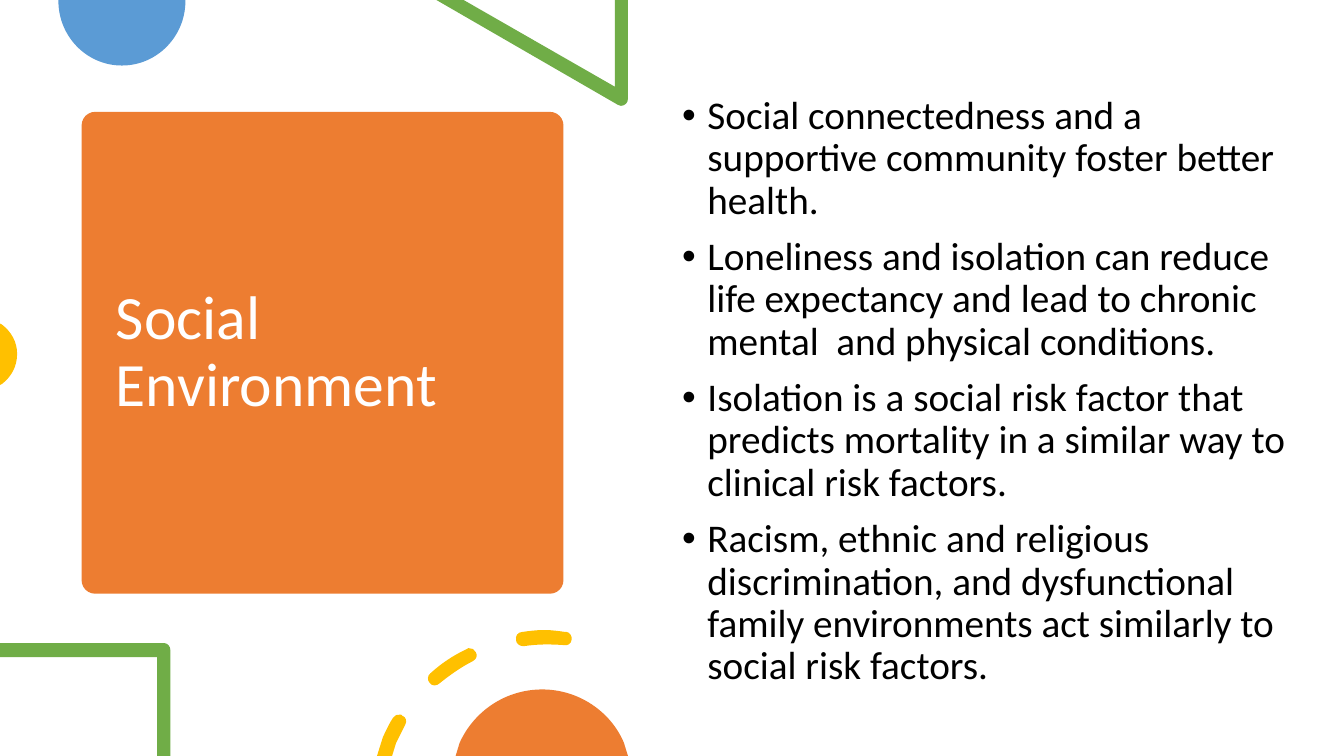
from lxml import etree
from pptx import Presentation
from pptx.dml.color import RGBColor
from pptx.enum.shapes import MSO_SHAPE
from pptx.enum.text import MSO_ANCHOR, MSO_AUTO_SIZE, PP_ALIGN
from pptx.oxml.ns import qn
from pptx.util import Inches, Pt

ROUNDED = MSO_SHAPE.ROUNDED_RECTANGLE
MIDDLE, TOP = MSO_ANCHOR.MIDDLE, MSO_ANCHOR.TOP
LEFT = PP_ALIGN.LEFT
NO_AUTOFIT = MSO_AUTO_SIZE.NONE
TITLE_ONLY = 5
FONT = "Calibri"
COLORS = {"orange": "ED7D31", "blue": "5B9BD5", "green": "70AD47",
          "gold": "FFC000", "white": "FFFFFF", "black": "000000"}

TITLE = "Social Environment"
POINTS = [
    "Social connectedness and a supportive community foster better health.",
    "Loneliness and isolation can reduce life expectancy and lead to chronic "
    "mental  and physical conditions.",
    "Isolation is a social risk factor that predicts mortality in a similar "
    "way to clinical risk factors.",
    "Racism, ethnic and religious discrimination, and dysfunctional family "
    "environments act similarly to social risk factors.",
]

# Each contour starts at a point; pairs are lines and sixes are cubic curves.
# Coordinates are inches from the top left of the decoration's box.
BLUE_DISC = [[(1.26, 0), (0, 0), (0, 0.01), (0, 0.36, 0.28, 0.65, 0.63, 0.65),
              (0.98, 0.65, 1.26, 0.36, 1.26, 0.01)]]
GREEN_TRIANGLE = [[(1.9, 0), (1.77, 0), (1.77, 0.86), (0.27, 0), (0, 0),
                   (1.8, 1.04), (1.81, 1.05, 1.82, 1.05, 1.83, 1.05),
                   (1.87, 1.05, 1.9, 1.02, 1.9, 0.98)]]
GOLD_DISC = [[(0, 0), (0, 0.61), (0.02, 0.6), (0.11, 0.53, 0.17, 0.43, 0.17, 0.3),
              (0.17, 0.18, 0.11, 0.08, 0.02, 0.01)]]
GREEN_FRAME = [[(1.63, 0), (0, 0), (0, 0.14), (1.56, 0.14), (1.56, 1.12),
                (1.69, 1.12), (1.69, 0.07), (1.69, 0.03, 1.66, 0, 1.63, 0)]]
GOLD_DASHES = [
    [(0.23, 0.84), (0.2, 0.83, 0.18, 0.85, 0.16, 0.87),
     (0.12, 0.93, 0.09, 1, 0.06, 1.06), (0, 1.25), (0.15, 1.25), (0.19, 1.12),
     (0.22, 1.06, 0.25, 1, 0.28, 0.94), (0.3, 0.91, 0.29, 0.86, 0.25, 0.85),
     (0.25, 0.84, 0.24, 0.84, 0.23, 0.84)],
    [(0.91, 0.18), (0.91, 0.18, 0.9, 0.18, 0.89, 0.19),
     (0.76, 0.25, 0.64, 0.33, 0.53, 0.43), (0.5, 0.45, 0.5, 0.5, 0.52, 0.52),
     (0.53, 0.54, 0.55, 0.55, 0.57, 0.55), (0.57, 0.55),
     (0.59, 0.55, 0.61, 0.54, 0.62, 0.53),
     (0.72, 0.45, 0.83, 0.37, 0.95, 0.31), (0.99, 0.29, 1, 0.25, 0.98, 0.22),
     (0.97, 0.19, 0.94, 0.18, 0.91, 0.18)],
    [(1.66, 0), (1.58, 0, 1.51, 0.01, 1.44, 0.02),
     (1.4, 0.02, 1.37, 0.06, 1.38, 0.1), (1.38, 0.13, 1.41, 0.16, 1.45, 0.16),
     (1.45, 0.16, 1.45, 0.16, 1.46, 0.16),
     (1.59, 0.14, 1.72, 0.14, 1.86, 0.15), (1.89, 0.16, 1.93, 0.13, 1.93, 0.1),
     (1.94, 0.06, 1.91, 0.02, 1.88, 0.02), (1.88, 0.02, 1.87, 0.02, 1.87, 0.02),
     (1.8, 0.01, 1.73, 0, 1.66, 0)],
]
ORANGE_DISC = [[(0.86, 0), (0.49, 0, 0.18, 0.22, 0.04, 0.53), (0, 0.66),
                (1.71, 0.66), (1.67, 0.53), (1.54, 0.22, 1.22, 0, 0.86, 0)]]
BEHIND_POINTS = [
    (0.58, 0, "blue", BLUE_DISC),
    (4.33, 0, "green", GREEN_TRIANGLE),
    (0, 3.21, "gold", GOLD_DISC),
]
BEFORE_POINTS = [
    (0, 6.38, "green", GREEN_FRAME),
    (3.74, 6.25, "gold", GOLD_DASHES),
    (4.52, 6.84, "orange", ORANGE_DISC),
]


def rgb(name):
    return RGBColor.from_string(COLORS[name])


def paint(shape, color):
    shape.fill.solid()
    shape.fill.fore_color.rgb = rgb(color)
    shape.line.fill.background()
    shape.shadow.inherit = False


def bend(shape, contours):
    """Turn the straight segments that stand for curves into cubic curves."""
    segments = [segment for contour in contours for segment in contour[1:]]
    lines = list(shape.element.iter(qn("a:lnTo")))
    for line, segment in zip(lines, segments):
        if len(segment) == 2:
            continue
        curve = etree.Element(qn("a:cubicBezTo"))
        for x, y in zip(segment[::2], segment[1::2]):
            point = etree.SubElement(curve, qn("a:pt"))
            point.set("x", str(Inches(x)))
            point.set("y", str(Inches(y)))
        line.getparent().replace(line, curve)


def add_decoration(slide, left, top, color, contours):
    builder = None
    for contour in contours:
        ends = [(Inches(left + segment[-2]), Inches(top + segment[-1]))
                for segment in contour]
        if builder is None:
            builder = slide.shapes.build_freeform(*ends[0])
        else:
            builder.move_to(*ends[0])
        builder.add_line_segments(ends[1:], close=True)
    shape = builder.convert_to_shape()
    bend(shape, contours)
    paint(shape, color)


def write(paragraph, text, size, color):
    paragraph.alignment = LEFT
    paragraph.line_spacing = 0.9
    run = paragraph.add_run()
    run.text = text
    run.font.name = FONT
    run.font.size = Pt(size)
    run.font.color.rgb = rgb(color)


def add_bullet(paragraph):
    properties = paragraph._p.get_or_add_pPr()
    properties.set("marL", str(Inches(0.25)))
    properties.set("indent", str(-Inches(0.25)))
    font = etree.SubElement(properties, qn("a:buFont"))
    font.set("typeface", "Arial")
    etree.SubElement(properties, qn("a:buChar")).set("char", "•")


def set_frame(frame, anchor):
    frame.word_wrap = True
    frame.auto_size = NO_AUTOFIT
    frame.vertical_anchor = anchor


def add_title_card(slide, left, top, side):
    card = slide.shapes.add_shape(
        ROUNDED, Inches(left), Inches(top), Inches(side), Inches(side))
    card.adjustments[0] = 0.028
    paint(card, "orange")

    title = slide.shapes.title
    title.left, title.top = Inches(left + 0.24), Inches(top + 0.11)
    title.width, title.height = Inches(side - 0.47), Inches(side - 0.22)
    set_frame(title.text_frame, MIDDLE)
    write(title.text_frame.paragraphs[0], TITLE, 44, "white")
    card.element.addnext(title.element)


def add_points(slide, left, top, width, height):
    box = slide.shapes.add_textbox(
        Inches(left), Inches(top), Inches(width), Inches(height))
    frame = box.text_frame
    set_frame(frame, TOP)
    for index, text in enumerate(POINTS):
        paragraph = frame.add_paragraph() if index else frame.paragraphs[0]
        write(paragraph, text, 28, "black")
        paragraph.space_before = Pt(10)
        add_bullet(paragraph)


def main():
    presentation = Presentation()
    presentation.slide_width = Inches(40 / 3)
    presentation.slide_height = Inches(7.5)
    slide = presentation.slides.add_slide(presentation.slide_layouts[TITLE_ONLY])
    add_title_card(slide, 0.81, 1.11, 4.78)
    for decoration in BEHIND_POINTS:
        add_decoration(slide, *decoration)
    add_points(slide, 6.67, 0.9, 6.27, 6.12)
    for decoration in BEFORE_POINTS:
        add_decoration(slide, *decoration)
    presentation.save("out.pptx")


if __name__ == "__main__":
    main()
